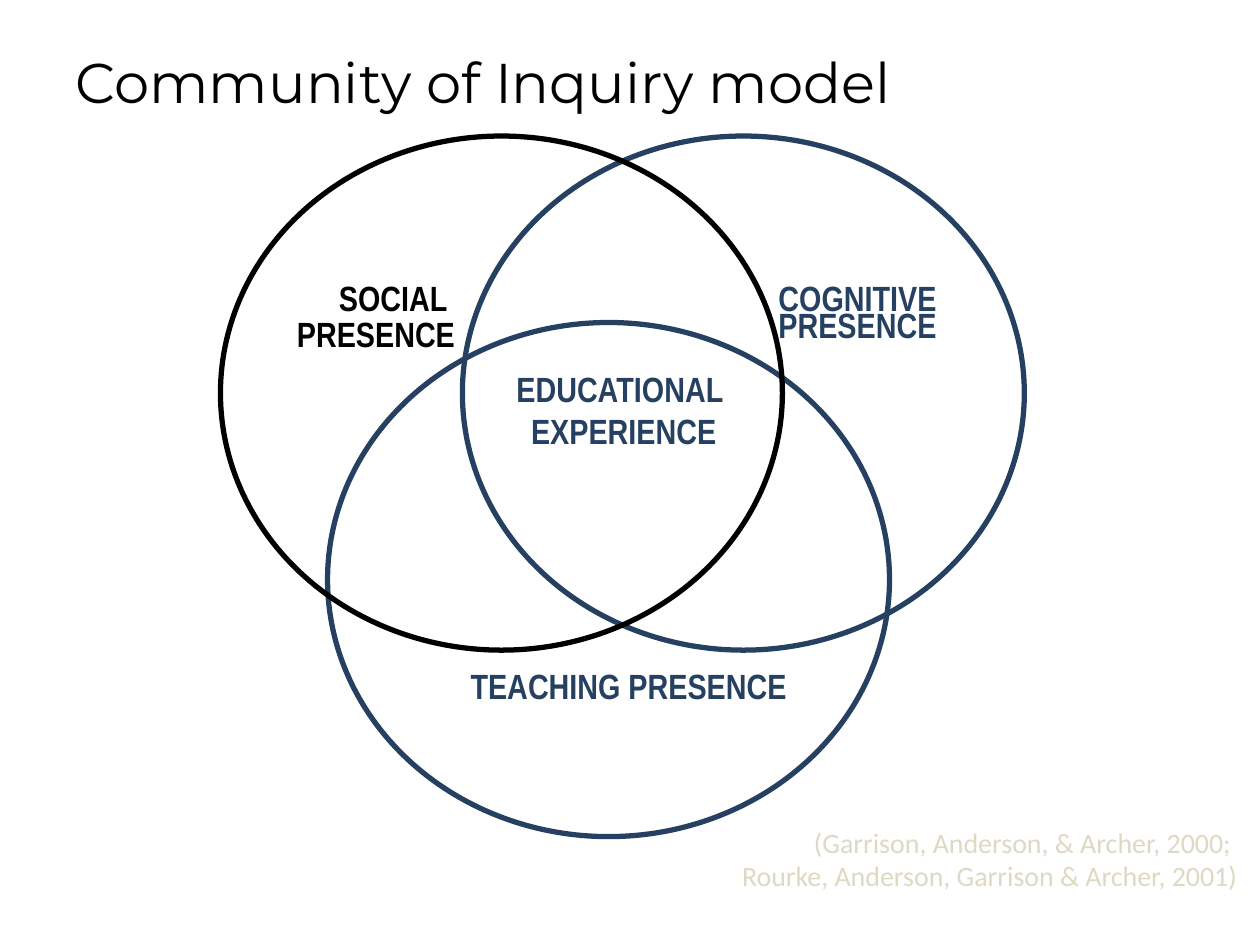
from dataclasses import dataclass

from pptx import Presentation
from pptx import util as u
from pptx.dml.color import RGBColor
from pptx.enum import shapes, text


@dataclass(frozen=True)
class Theme:
    navy: str = "254061"
    black: str = "000000"
    sand: str = "DDD9C3"
    label_font: str = "Arial Narrow"
    title_font: str = "Montserrat"
    body_font: str = "Calibri"
    label_size: int = 20
    title_size: int = 32
    citation_size: int = 16
    outline: int = 3
    circle_width: float = 4.46
    circle_height: float = 4.08


class SlideBuilder:
    def __init__(self, s, theme):
        self.s = s
        self.theme = theme

    def circle(self, left, top, color):
        t = self.theme
        sp = self.s.shapes.add_shape(
            shapes.MSO_SHAPE.OVAL, u.Inches(left), u.Inches(top),
            u.Inches(t.circle_width), u.Inches(t.circle_height))
        sp.shadow.inherit = False
        sp.fill.background()
        sp.line.color.rgb = RGBColor.from_string(color)
        sp.line.width = u.Pt(t.outline)
        return sp

    def text(self, box, lines, font, size, color, align=text.PP_ALIGN.LEFT,
             bold=False, spacing=None, before=0, wrap=True, grow=True):
        sp = self.s.shapes.add_textbox(*map(u.Inches, box))
        tf = sp.text_frame
        tf.word_wrap = wrap
        fit = text.MSO_AUTO_SIZE
        tf.auto_size = fit.SHAPE_TO_FIT_TEXT if grow else fit.NONE
        for i, line in enumerate(lines):
            p = tf.add_paragraph() if i else tf.paragraphs[0]
            p.alignment = align
            p.line_spacing = spacing
            p.space_before = u.Pt(size * before)
            r = p.add_run()
            r.text = line
            r.font.name = font
            r.font.size = u.Pt(size)
            r.font.bold = bold
            r.font.color.rgb = RGBColor.from_string(color)
        return sp

    def label(self, box, lines, color, align, spacing=0.65, before=0.25, wrap=True):
        t = self.theme
        return self.text(box, lines, t.label_font, t.label_size, color, align,
                         bold=True, spacing=spacing, before=before, wrap=wrap)

    def title(self, box, line):
        t = self.theme
        return self.text(box, [line], t.title_font, t.title_size, t.black,
                         before=0.2, grow=False)

    def citation(self, box, lines):
        t = self.theme
        return self.text(box, lines, t.body_font, t.citation_size, t.sand,
                         text.PP_ALIGN.RIGHT)

    def group(self, members):
        return self.s.shapes.add_group_shape(members)


def main():
    prs = Presentation()
    prs.slide_width, prs.slide_height = u.Inches(10), u.Inches(7.5)
    theme = Theme()
    b = SlideBuilder(prs.slides.add_slide(prs.slide_layouts[6]), theme)
    align = text.PP_ALIGN

    b.group([
        b.circle(2.6, 2.56, theme.navy),
        b.circle(3.67, 1.08, theme.navy),
        b.label((3.29, 5.33, 3.4, 0.32), ["TEACHING PRESENCE"],
                theme.navy, align.CENTER),
        b.label((6.08, 2.25, 2.75, 0.54), ["COGNITIVE PRESENCE"],
                theme.navy, align.LEFT),
        b.label((3.99, 2.87, 1.92, 0.77), ["EDUCATIONAL ", "EXPERIENCE"],
                theme.navy, align.CENTER, spacing=None, before=0, wrap=False),
    ])
    b.circle(1.75, 1.08, theme.black)
    b.label((1.17, 2.25, 2.54, 0.63), ["SOCIAL ", "PRESENCE"],
            theme.black, align.RIGHT)
    b.title((0.5, 0.33, 8.58, 0.67), "Community of Inquiry model")
    b.citation((3.46, 6.5, 6.46, 0.64),
               ["(Garrison, Anderson, & Archer, 2000; ",
                "Rourke, Anderson, Garrison & Archer, 2001)"])
    prs.save("out.pptx")


if __name__ == "__main__":
    main()
